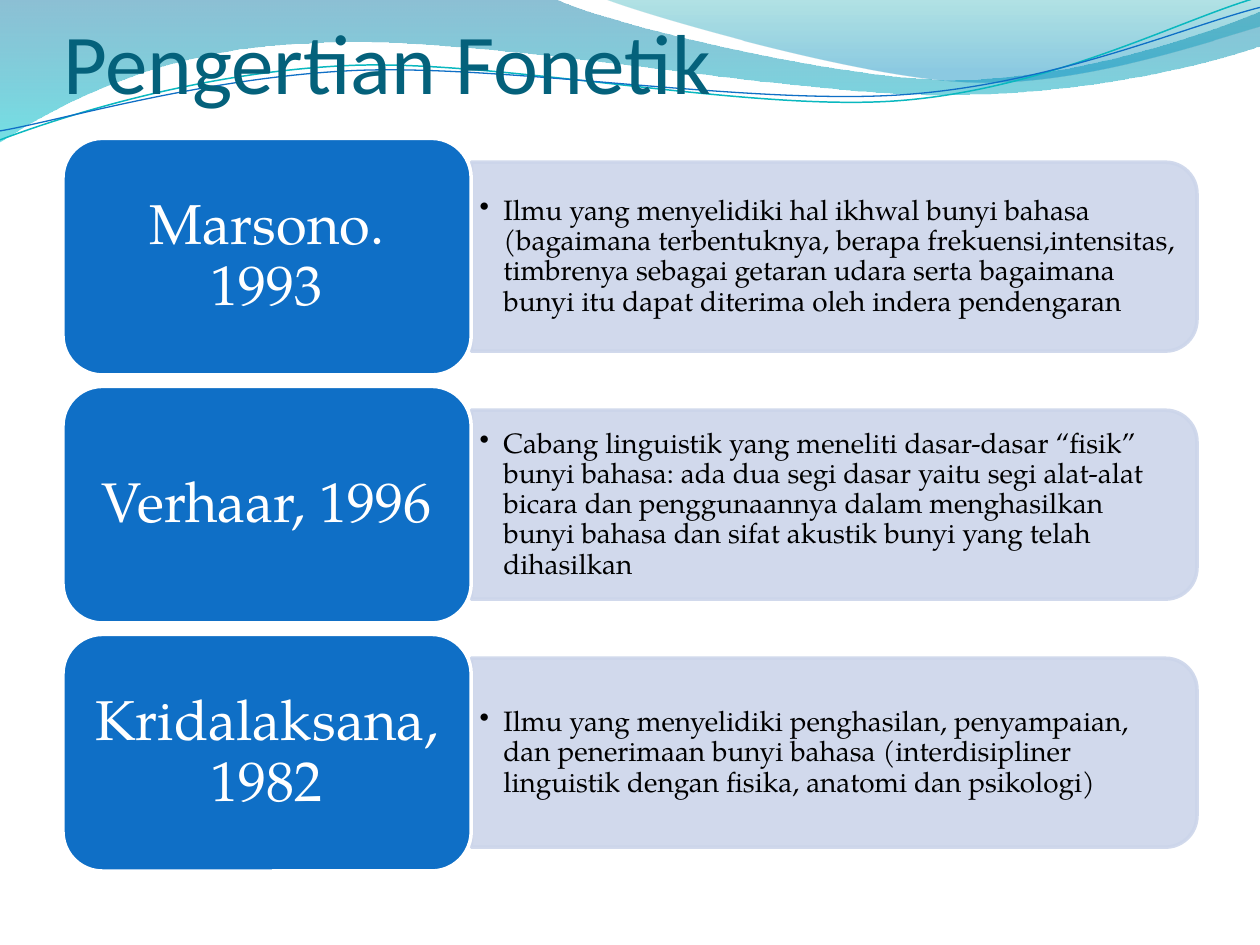
import math

from lxml import etree
from pptx import Presentation
from pptx import util as u
from pptx.dml.color import RGBColor
from pptx.enum import shapes, text
from pptx.oxml.ns import qn

TITLE = "Pengertian Fonetik"
ROWS = [
    ("Marsono. 1993",
     "Ilmu yang menyelidiki hal ikhwal bunyi bahasa (bagaimana terbentuknya, "
     "berapa frekuensi,intensitas, timbrenya sebagai getaran udara serta "
     "bagaimana bunyi itu dapat diterima oleh indera pendengaran"),
    ("Verhaar, 1996",
     "Cabang linguistik yang meneliti dasar-dasar “fisik” bunyi bahasa: ada dua "
     "segi dasar yaitu segi alat-alat bicara dan penggunaannya dalam "
     "menghasilkan bunyi bahasa dan sifat akustik bunyi yang telah dihasilkan"),
    ("Kridalaksana, 1982",
     "Ilmu yang menyelidiki penghasilan, penyampaian, dan penerimaan bunyi "
     "bahasa (interdisipliner linguistik dengan fisika, anatomi dan psikologi)"),
]
THEME = {
    "head": ("Calibri", 48.6, "04617B"),
    "name": ("TeX Gyre Pagella", 32, "FFFFFF"),
    "note": ("TeX Gyre Pagella", 16, "000000"),
    "pill": "0F6FC6", "edge": "FFFFFF", "panel": "CCD5EA",
}

# Outlines in cm: a pair is a straight step, a triple of pairs a Bezier curve.
BANDS = [
    ([(0, 0), (11.18, -0.03),
      ((12.09, 0.43), (16.87, 1.6), (19.25, 1.6)),
      ((21.67, 1.6), (24.33, 0.66), (25.4, 0.23)), (25.43, 0.91),
      ((24.94, 1.12), (22.1, 1.93), (18.95, 1.91)),
      ((15.8, 1.91), (9.7, 0.71), (6.53, 0.86)),
      ((3.28, 0.91), (1.17, 2.11), (-0.03, 2.87))],
     [(0, "0074A1", 45), (1, "00C6CF", 55)]),
    ([(12.17, -0.03),
      ((12.93, 0.28), (17.32, 1.57), (19.53, 1.65)),
      ((21.74, 1.75), (24.41, 0.81), (25.4, 0.53)), (25.4, 0)],
     [(0, "00A1A9", 30), (0.8, "008BBF", 45)]),
]
TILT = -2.7
WAVES = [  # outline, centre, colour, width
    ([(0, 2.82), ((1.22, 2.36), (4.01, 1.45), (7.04, 1.32)),
      ((10.03, 1.19), (15.06, 2.26), (18.11, 2.03)),
      ((21.16, 1.8), (23.83, 0.38), (25.35, -0.05))],
     (12.67, 1.46), "0AB8BF", 0.85),
    ([(0, 2.64), ((1.19, 2.44), (4.17, 1.55), (7.19, 1.42)),
      ((10.24, 1.3), (15.16, 2.13), (18.21, 1.91)),
      ((21.23, 1.7), (23.9, 0.53), (25.4, 0.15))],
     (12.69, 1.5), "0F6FC6", 0.75),
]

LEFT, TOP, PITCH = 1.27, 2.79, 5.0
PILL_W, PILL_H = 8.23, 4.77
PANEL_W, PANEL_H = 14.63, 3.81
NOTE_W, NOTE_H = 14.45, 3.43


def rgb(code):
    return RGBColor.from_string(code)


def fade(node, pct):
    """Set the opacity of every colour under an XML node."""
    for clr in list(node.iter(qn("a:srgbClr"))):
        etree.SubElement(clr, qn("a:alpha")).set("val", str(pct * 1000))


def spin(point, hub, angle):
    """Turn a point clockwise about a hub."""
    dx, dy = point[0] - hub[0], point[1] - hub[1]
    cos, sin = math.cos(math.radians(angle)), math.sin(math.radians(angle))
    return hub[0] + dx * cos - dy * sin, hub[1] + dx * sin + dy * cos


def draw(slide, path, close, hub=(0, 0), tilt=0):
    """Build an outline, then join each triple of steps into one curve."""
    steps = [s if isinstance(s[0], tuple) else (s,) for s in path]
    pts = [tuple(map(u.Cm, spin(p, hub, -tilt))) for s in steps for p in s]
    pen = slide.shapes.build_freeform(*pts[0])
    pen.add_line_segments(pts[1:], close=close)
    shape = pen.convert_to_shape()
    shape.shadow.inherit = False
    shape.rotation = tilt

    lines = iter(list(shape._element.iter(qn("a:lnTo"))))
    for step in steps[1:]:
        first, *rest = [next(lines) for _ in step]
        if rest:
            curve = etree.Element(qn("a:cubicBezTo"))
            first.addprevious(curve)
            for line in (first, *rest):
                curve.append(line[0])
                line.getparent().remove(line)
    return shape


def band(slide, path, stops):
    shape = draw(slide, path, True)
    shape.line.fill.background()
    shape.fill.gradient()
    shape.fill.gradient_angle = 270
    for stop, (pos, code, pct) in zip(shape.fill.gradient_stops, stops):
        stop.position = pos
        stop.color.rgb = rgb(code)
        fade(stop._gs, pct)


def wave(slide, path, hub, code, width):
    shape = draw(slide, path, False, hub, TILT)
    shape.fill.background()
    shape.line.color.rgb = rgb(code)
    shape.line.width = u.Pt(width)


def write(shape, words, style, align, anchor, pads):
    """Fill a frame with one paragraph; pads are left, top, right, bottom."""
    frame = shape.text_frame
    frame.text = words
    frame.word_wrap = True
    frame.auto_size = text.MSO_AUTO_SIZE.NONE
    frame.vertical_anchor = anchor
    (frame.margin_left, frame.margin_top,
     frame.margin_right, frame.margin_bottom) = map(u.Cm, pads)
    para = frame.paragraphs[0]
    para.alignment = align
    face, size, code = THEME[style]
    font = para.runs[0].font
    font.name, font.size = face, u.Pt(size)
    font.color.rgb = rgb(code)
    return para


def block(slide, kind, box, fill, edge):
    shape = slide.shapes.add_shape(kind, *map(u.Cm, box))
    shape.shadow.inherit = False
    shape.fill.solid()
    shape.fill.fore_color.rgb = rgb(fill)
    shape.line.color.rgb = rgb(edge)
    shape.line.width = u.Pt(2)
    return shape


def row(slide, num, name, note):
    mid = TOP + num * PITCH + PILL_H / 2
    seam = LEFT + PILL_W
    kind = shapes.MSO_SHAPE

    # The panel is a tall shape turned on its side about its centre.
    panel = block(slide, kind.ROUND_2_SAME_RECTANGLE,
                  (seam + (PANEL_W - PANEL_H) / 2, mid - PANEL_W / 2,
                   PANEL_H, PANEL_W), THEME["panel"], THEME["panel"])
    panel.rotation = 90
    fade(panel._element.spPr, 90)

    box = slide.shapes.add_textbox(
        *map(u.Cm, (seam, mid - NOTE_H / 2, NOTE_W, NOTE_H)))
    para = write(box, note, "note", text.PP_ALIGN.LEFT,
                 text.MSO_ANCHOR.MIDDLE, (0.17, 0.08, 0.17, 0.08))
    para.line_spacing = 0.9
    para.level = 1
    props = para._p.get_or_add_pPr()
    props.set("marL", str(u.Cm(0.48)))
    props.set("indent", str(-u.Cm(0.48)))
    etree.SubElement(props, qn("a:buChar")).set("char", "•")

    pill = block(slide, kind.ROUNDED_RECTANGLE,
                 (LEFT, mid - PILL_H / 2, PILL_W, PILL_H),
                 THEME["pill"], THEME["edge"])
    para = write(pill, name, "name", text.PP_ALIGN.CENTER,
                 text.MSO_ANCHOR.MIDDLE, (0.33, 0.17, 0.33, 0.17))
    para.line_spacing = 0.9


def main():
    deck = Presentation()
    deck.slide_width, deck.slide_height = u.Cm(25.4), u.Cm(19.05)
    slide = deck.slides.add_slide(deck.slide_layouts[5])
    for item in BANDS:
        band(slide, *item)
    for item in WAVES:
        wave(slide, *item)

    head = slide.shapes.title
    slide.shapes._spTree.append(head._element)
    head.left, head.top, head.width, head.height = map(
        u.Cm, (LEFT, 0.79, 22.86, 3.38))
    write(head, TITLE, "head", text.PP_ALIGN.LEFT,
          text.MSO_ANCHOR.BOTTOM, (0, 0, 0, 1.92))

    for num, (name, note) in enumerate(ROWS):
        row(slide, num, name, note)
    deck.save("out.pptx")


if __name__ == "__main__":
    main()
